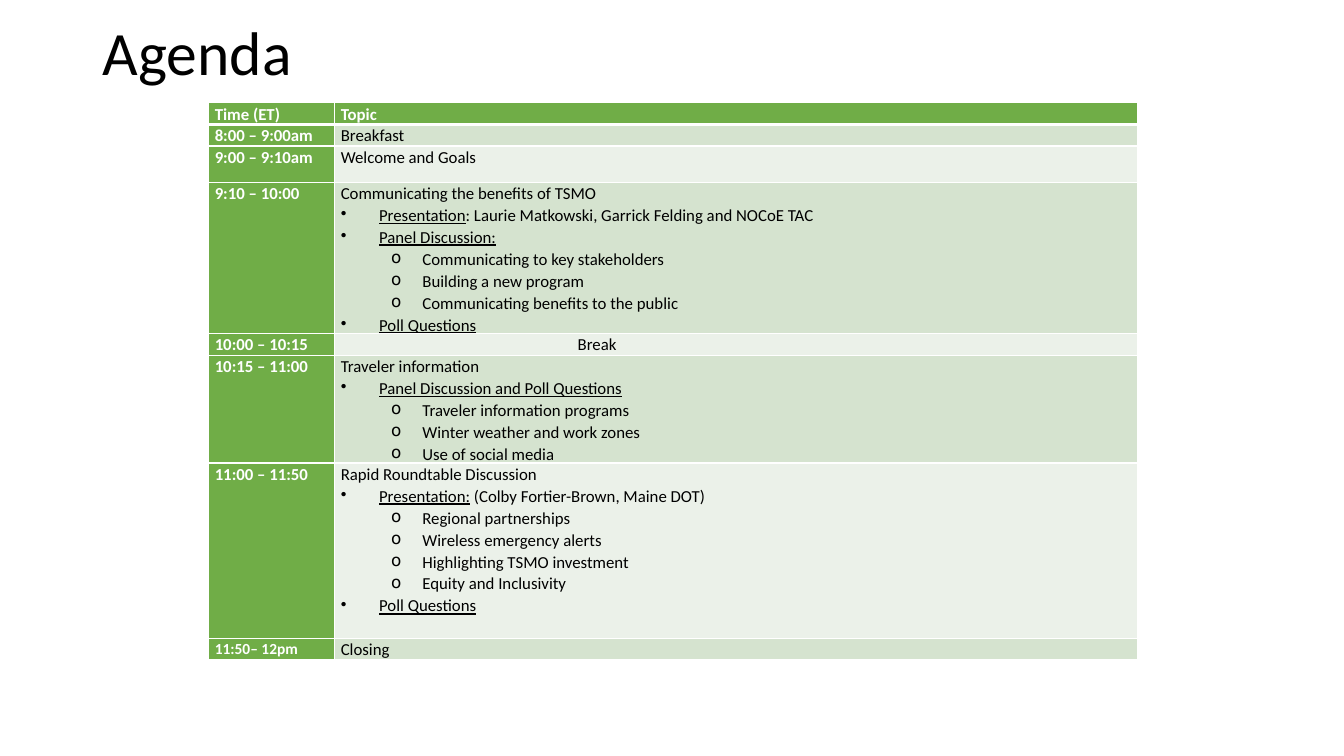
"""Builds the agenda slide with its timetable."""
from lxml import etree
from pptx import Presentation
from pptx.dml.color import RGBColor
from pptx.enum.text import MSO_ANCHOR
from pptx.oxml.ns import qn
from pptx.util import Inches, Pt

MIDDLE, TOP = MSO_ANCHOR.MIDDLE, MSO_ANCHOR.TOP
COLORS = {"black": "000000", "white": "FFFFFF", "green": "70AD47",
          "band_dark": "D5E3CF", "band_light": "EBF1E9"}
PLAIN, BULLET, SUB, BREAK = "plain", "bullet", "sub", "break"
INDENTS = {BULLET: (0.38, -0.38, "•"), SUB: (0.81, -0.31, "o"), BREAK: (2.35, 0, None)}

AGENDA = [
    ("Time (ET)", 0.2, [(PLAIN, "", "Topic")]),
    ("8:00 – 9:00am", 0.2, [(PLAIN, "", "Breakfast")]),
    ("9:00 – 9:10am", 0.36, [(PLAIN, "", "Welcome and Goals")]),
    ("9:10 – 10:00", 1.46, [
        (PLAIN, "", "Communicating the benefits of TSMO"),
        (BULLET, "Presentation", ": Laurie Matkowski, Garrick Felding and NOCoE TAC"),
        (BULLET, "Panel Discussion:", ""),
        (SUB, "", "Communicating to key stakeholders"),
        (SUB, "", "Building a new program"),
        (SUB, "", "Communicating benefits to the public"),
        (BULLET, "Poll Questions", "")]),
    ("10:00 – 10:15", 0.22, [(BREAK, "", "Break")]),
    ("10:15 – 11:00", 1.04, [
        (PLAIN, "", "Traveler information"),
        (BULLET, "Panel Discussion and Poll Questions", ""),
        (SUB, "", "Traveler information programs"),
        (SUB, "", "Winter weather and work zones"),
        (SUB, "", "Use of social media")]),
    ("11:00 – 11:50", 1.74, [
        (PLAIN, "", "Rapid Roundtable Discussion"),
        (BULLET, "Presentation:", " (Colby Fortier-Brown, Maine DOT)"),
        (SUB, "", "Regional partnerships"),
        (SUB, "", "Wireless emergency alerts"),
        (SUB, "", "Highlighting TSMO investment"),
        (SUB, "", "Equity and Inclusivity"),
        (BULLET, "Poll Questions", "")]),
    ("11:50– 12pm", 0.2, [(PLAIN, "", "Closing")]),
]


class AgendaSlide:
    """Holds the style and the current slide."""

    def __init__(self, prs, font="Calibri"):
        self.slide = prs.slides.add_slide(prs.slide_layouts[6])
        self.font = font

    def run(self, p, text, size, color, bold=False, underline=False):
        """Adds a formatted run."""
        r = p.add_run()
        r.text = text
        f = r.font
        f.name, f.size, f.bold, f.underline = self.font, Pt(size), bold, underline
        f.color.rgb = RGBColor.from_string(COLORS[color])

    def title(self, text, left, top, width, height):
        """Adds the slide title."""
        tf = self.slide.shapes.add_textbox(
            Inches(left), Inches(top), Inches(width), Inches(height)).text_frame
        tf.word_wrap = True
        tf.vertical_anchor = MIDDLE
        p = tf.paragraphs[0]
        p.line_spacing = 0.9
        self.run(p, text, 44, "black")

    def borders(self, cell, row):
        """Draws white cell borders, thicker under the header."""
        tcPr = cell._tc.get_or_add_tcPr()
        thick = {(0, "lnB"), (1, "lnT")}
        for side in ("lnL", "lnR", "lnT", "lnB"):
            width = Pt(3 if (row, side) in thick else 1)
            ln = etree.SubElement(tcPr, qn("a:" + side), w=str(width))
            fill = etree.SubElement(ln, qn("a:solidFill"))
            etree.SubElement(fill, qn("a:srgbClr"), val=COLORS["white"])

    def cell(self, cell, row, fill, lines, size, color, bold):
        """Fills one table cell with paragraphs."""
        self.borders(cell, row)
        cell.fill.solid()
        cell.fill.fore_color.rgb = RGBColor.from_string(COLORS[fill])
        cell.margin_left = cell.margin_right = Inches(0.06)
        cell.margin_top = cell.margin_bottom = 0
        cell.vertical_anchor = MIDDLE if lines[0][0] == BREAK else TOP
        tf = cell.text_frame
        for i, (kind, underlined, text) in enumerate(lines):
            p = tf.add_paragraph() if i else tf.paragraphs[0]
            p.line_spacing = 1.07
            p.level = 1 if kind == SUB else 0
            if kind in INDENTS:
                self.indent(p, *INDENTS[kind])
            if underlined:
                self.run(p, underlined, size, color, bold, True)
            if text:
                self.run(p, text, size, color, bold)

    def indent(self, p, margin, first, char):
        """Sets a paragraph indent and its bullet."""
        pPr = p._p.get_or_add_pPr()
        pPr.set("marL", str(Inches(margin)))
        pPr.set("indent", str(Inches(first)))
        if char:
            etree.SubElement(pPr, qn("a:buChar"), char=char)

    def table(self, rows, left, top, widths):
        """Adds the timetable."""
        height = sum(h for _, h, _ in rows)
        table = self.slide.shapes.add_table(
            len(rows), len(widths), Inches(left), Inches(top),
            Inches(sum(widths)), Inches(height)).table
        table.horz_banding = False
        table.first_col = True
        for col, width in zip(table.columns, widths):
            col.width = Inches(width)
        last = len(rows) - 1
        for i, (time, row_height, topics) in enumerate(rows):
            table.rows[i].height = Inches(row_height)
            self.cell(table.cell(i, 0), i, "green", [(PLAIN, "", time)],
                      11 if i == last else 12, "white", True)
            band = "band_dark" if i % 2 else "band_light"
            self.cell(table.cell(i, 1), i, band if i else "green", topics,
                      12, "black" if i else "white", i == 0)


def main():
    prs = Presentation()
    prs.slide_width, prs.slide_height = Inches(13.33), Inches(7.5)
    s = AgendaSlide(prs)
    s.title("Agenda", 0.92, 0, 11.5, 1.1)
    s.table(AGENDA, 2.07, 1.02, (1.25, 7.96))
    prs.save("out.pptx")


if __name__ == "__main__":
    main()
